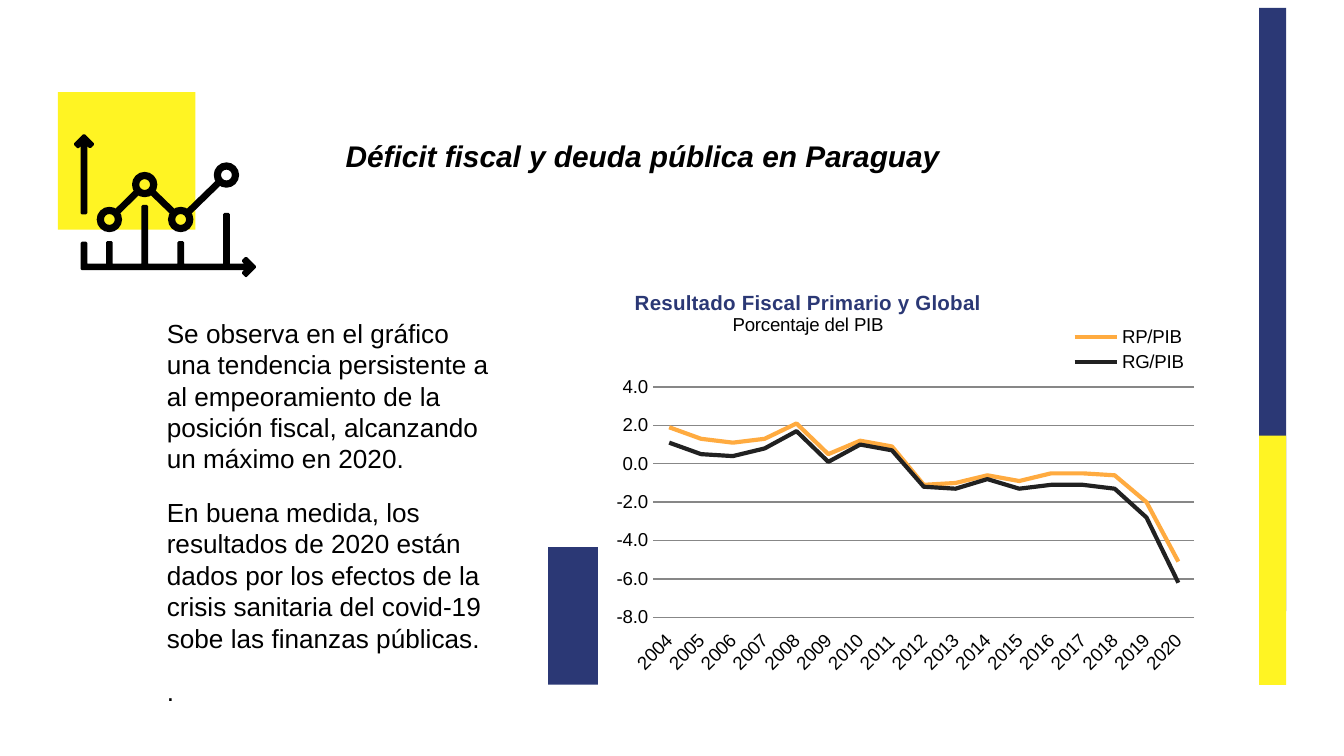
import math
from dataclasses import dataclass
from itertools import pairwise

from pptx import Presentation
from pptx.chart.data import CategoryChartData
from pptx.dml.color import RGBColor
from pptx.enum.chart import XL_CHART_TYPE, XL_LEGEND_POSITION, XL_TICK_LABEL_POSITION, XL_TICK_MARK
from pptx.enum.shapes import MSO_SHAPE
from pptx.enum.text import MSO_ANCHOR, MSO_AUTO_SIZE, PP_ALIGN
from pptx.oxml import parse_xml
from pptx.oxml.ns import nsdecls, qn
from pptx.util import Pt

LINE_CHART = XL_CHART_TYPE.LINE
LEGEND_RIGHT = XL_LEGEND_POSITION.RIGHT
LABELS_LOW = XL_TICK_LABEL_POSITION.LOW
LABELS_NEXT = XL_TICK_LABEL_POSITION.NEXT_TO_AXIS
NO_TICK = XL_TICK_MARK.NONE
RECTANGLE = MSO_SHAPE.RECTANGLE
TOP, LEFT = MSO_ANCHOR.TOP, PP_ALIGN.LEFT
NO_AUTOFIT = MSO_AUTO_SIZE.NONE


@dataclass(frozen=True)
class Theme:
    navy: RGBColor = RGBColor(0x2B, 0x38, 0x75)
    yellow: RGBColor = RGBColor(0xFF, 0xF4, 0x23)
    black: RGBColor = RGBColor(0, 0, 0)
    white: RGBColor = RGBColor(0xFF, 0xFF, 0xFF)
    grid: RGBColor = RGBColor(0x87, 0x87, 0x87)
    primary: RGBColor = RGBColor(0xFF, 0xAB, 0x40)
    overall: RGBColor = RGBColor(0x21, 0x21, 0x21)
    font: str = "Arial"
    title: int = 16
    body: int = 14
    chart_title: int = 11
    chart: int = 10


THEME = Theme()

PARAGRAPHS = (
    "Se observa en el gráfico una tendencia persistente a al empeoramiento de la "
    "posición fiscal, alcanzando un máximo en 2020.",
    "En buena medida, los resultados de 2020 están dados por los efectos de la "
    "crisis sanitaria del covid-19 sobe las finanzas públicas.",
    ".",
)
YEARS = [str(year) for year in range(2004, 2021)]
RESULTS = (
    ("RP/PIB", THEME.primary,
     (1.9, 1.3, 1.1, 1.3, 2.1, 0.5, 1.2, 0.9, -1.1, -1, -0.6, -0.9, -0.5, -0.5, -0.6, -2, -5.1)),
    ("RG/PIB", THEME.overall,
     (1.1, 0.5, 0.4, 0.8, 1.7, 0.1, 1, 0.7, -1.2, -1.3, -0.8, -1.3, -1.1, -1.1, -1.3, -2.8, -6.2)),
)


def add_block(slide, left, top, width, height, color):
    block = slide.shapes.add_shape(RECTANGLE, Pt(left), Pt(top), Pt(width), Pt(height))
    block.shadow.inherit = False
    block.fill.solid()
    block.fill.fore_color.rgb = color
    block.line.fill.background()


def circle(center, radius, steps=16):
    angles = [2 * math.pi * step / steps for step in range(steps)]
    return [(center[0] + radius * math.cos(a), center[1] + radius * math.sin(a)) for a in angles]


def bar(start, end, trim, half):
    """Outline a bar between two points, cut short at both ends."""
    angle = math.atan2(end[1] - start[1], end[0] - start[0])
    ux, uy = math.cos(angle), math.sin(angle)
    ends = ((start, trim, -half), (start, trim, half), (end, -trim, half), (end, -trim, -half))
    return [(x + along * ux - across * uy, y + along * uy + across * ux)
            for (x, y), along, across in ends]


def trend_contours():
    """Outline the icon's two axis arrows, rings and joining bars."""
    half, outer, inner = 1.1, 6.1, 3.6
    axis_x, axis_y, arrow_top, arrow_right = 45, 143, 74, 135
    nodes = ((58.6, 117.6), (77.5, 98.9), (96.8, 117.6), (121.3, 93.8))
    stems = ((axis_x, 130.2), (58.6, 129.9), (77.5, 110.5), (96.8, 129.9), (121.3, 114.8))
    # Distance behind the tip and sideways, from one edge of the shaft to the other.
    wing = [(2.66, half), (4.78, 3.22), (3.22, 4.78)]
    head = [(along, -across) for along, across in wing] + [(-1.56, 0)] + wing[::-1]

    vertical = [(axis_x + across, arrow_top + along) for along, across in head]
    vertical += [(axis_x + half, 114.2), (axis_x - half, 114.2)]
    horizontal = [(axis_x - half, axis_y + half)]
    for x, top in stems:
        horizontal += [(x - half, axis_y - half), (x - half, top),
                       (x + half, top), (x + half, axis_y - half)]
    horizontal += [(arrow_right - along, axis_y + across) for along, across in head]

    contours = [vertical, horizontal]
    for node in nodes:
        contours += [circle(node, outer), circle(node, inner)[::-1]]
    contours += [bar(start, end, outer, half) for start, end in pairwise(nodes)]
    return contours


def add_trend_icon(slide):
    builder = None
    for contour in trend_contours():
        first, *others = [(Pt(x), Pt(y)) for x, y in contour]
        if builder is None:
            builder = slide.shapes.build_freeform(*first)
        else:
            builder.move_to(*first)
        builder.add_line_segments(others, close=True)
    icon = builder.convert_to_shape()
    icon.shadow.inherit = False
    icon.fill.solid()
    icon.fill.fore_color.rgb = THEME.black
    icon.line.color.rgb = THEME.black
    icon.line.width = Pt(1.4)
    icon._element.spPr.find(qn("a:ln")).append(parse_xml(f"<a:round {nsdecls('a')}/>"))


def style_font(font, size, color=THEME.black, bold=False, italic=False):
    font.name, font.size = THEME.font, Pt(size)
    font.bold, font.italic = bold, italic
    font.color.rgb = color


def prepare_frame(frame):
    frame.word_wrap = True
    frame.auto_size = NO_AUTOFIT
    frame.vertical_anchor = TOP
    frame.margin_left = frame.margin_right = frame.margin_top = frame.margin_bottom = Pt(7.2)


def add_title(slide, wording):
    title = slide.shapes.title
    title.left, title.top, title.width, title.height = map(Pt, (178, 66.6, 539.3, 45.4))
    prepare_frame(title.text_frame)
    paragraph = title.text_frame.paragraphs[0]
    paragraph.alignment = LEFT
    run = paragraph.add_run()
    run.text = wording
    style_font(run.font, THEME.title, bold=True, italic=True)


def add_body(slide, wordings):
    body = slide.shapes.add_textbox(*map(Pt, (82.3, 162.7, 191, 193)))
    frame = body.text_frame
    prepare_frame(frame)
    for index, wording in enumerate(wordings):
        paragraph = frame.add_paragraph() if index else frame.paragraphs[0]
        paragraph.space_after = Pt(12)
        paragraph.line_spacing = 1.0
        run = paragraph.add_run()
        run.text = wording
        style_font(run.font, THEME.body)


def layout_xml(x, y, width=None, height=None, inner=False):
    """Give a manual chart layout in fractions of the chart's size."""
    target = '<c:layoutTarget val="inner"/>' if inner else ""
    size = f'<c:w val="{width}"/><c:h val="{height}"/>' if width else ""
    return parse_xml(
        f'<c:layout {nsdecls("c")}><c:manualLayout>{target}<c:xMode val="edge"/><c:yMode val="edge"/>'
        f'<c:x val="{x}"/><c:y val="{y}"/>{size}</c:manualLayout></c:layout>')


def place_part(part, after, layout):
    """Put a layout into a chart part, behind the named child or first."""
    for old in part.findall(qn("c:layout")):
        part.remove(old)
    if after:
        part.find(qn(after)).addnext(layout)
    else:
        part.insert(0, layout)


def format_axes(chart):
    years, values = chart.category_axis, chart.value_axis
    for axis, labels in ((years, LABELS_LOW), (values, LABELS_NEXT)):
        axis.major_tick_mark = axis.minor_tick_mark = NO_TICK
        axis.format.line.fill.background()
        axis.tick_label_position = labels
        style_font(axis.tick_labels.font, THEME.chart)
    years._element.txPr.find(qn("a:bodyPr")).set("rot", str(-45 * 60000))
    values.minimum_scale, values.maximum_scale, values.major_unit = -8, 4, 2
    values.tick_labels.number_format = "#,##0.0"
    values.tick_labels.number_format_is_linked = False
    values.major_gridlines.format.line.color.rgb = THEME.grid
    values.major_gridlines.format.line.width = Pt(0.75)


def add_results_chart(slide):
    data = CategoryChartData(number_format="0.0")
    data.categories = YEARS
    for name, _, values in RESULTS:
        data.add_series(name, values)
    chart = slide.shapes.add_chart(LINE_CHART, *map(Pt, (320.4, 139.7, 329, 238.3)), data).chart
    style_font(chart.font, THEME.chart)
    for series, (_, color, _) in zip(chart.plots[0].series, RESULTS):
        series.smooth = False
        series.format.line.color.rgb = color
        series.format.line.width = Pt(2.25)
    chart.plots[0].vary_by_categories = False
    format_axes(chart)

    heading = chart.chart_title.text_frame
    lines = (("Resultado Fiscal Primario y Global", THEME.chart_title, THEME.navy, True),
             ("Porcentaje del PIB", THEME.chart, THEME.black, False))
    for index, (wording, size, color, bold) in enumerate(lines):
        paragraph = heading.add_paragraph() if index else heading.paragraphs[0]
        run = paragraph.add_run()
        run.text = wording
        style_font(run.font, size, color, bold)

    chart.has_legend = True
    chart.legend.position = LEGEND_RIGHT
    chart.legend.include_in_layout = False
    style_font(chart.legend.font, THEME.chart)

    place_part(chart.chart_title._element, "c:tx", layout_xml(0.053, 0.053))
    place_part(chart.legend._element, "c:legendPos", layout_xml(0.765, 0.14, 0.2, 0.12))
    plot_area = chart._chartSpace.chart.plotArea
    place_part(plot_area, None, layout_xml(0.09, 0.284, 0.881, 0.518, inner=True))
    background = parse_xml(
        f'<c:spPr {nsdecls("c", "a")}><a:solidFill><a:srgbClr val="{THEME.white}"/></a:solidFill>'
        '<a:ln><a:noFill/></a:ln></c:spPr>')
    chart._chartSpace.chart.addnext(background)


def main():
    deck = Presentation()
    deck.slide_width, deck.slide_height = Pt(720), Pt(405)
    slide = deck.slides.add_slide(deck.slide_layouts[5])
    add_block(slide, 674.6, 4.2, 14.4, 323.3, THEME.navy)
    add_block(slide, 674.6, 233.4, 14.4, 133.5, THEME.yellow)
    add_block(slide, 31, 49.4, 73.7, 73.7, THEME.yellow)
    add_block(slide, 293.6, 293.2, 73.7, 73.7, THEME.navy)
    add_trend_icon(slide)
    add_title(slide, "Déficit fiscal y deuda pública en Paraguay")
    add_body(slide, PARAGRAPHS)
    add_results_chart(slide)
    deck.save("out.pptx")


if __name__ == "__main__":
    main()
